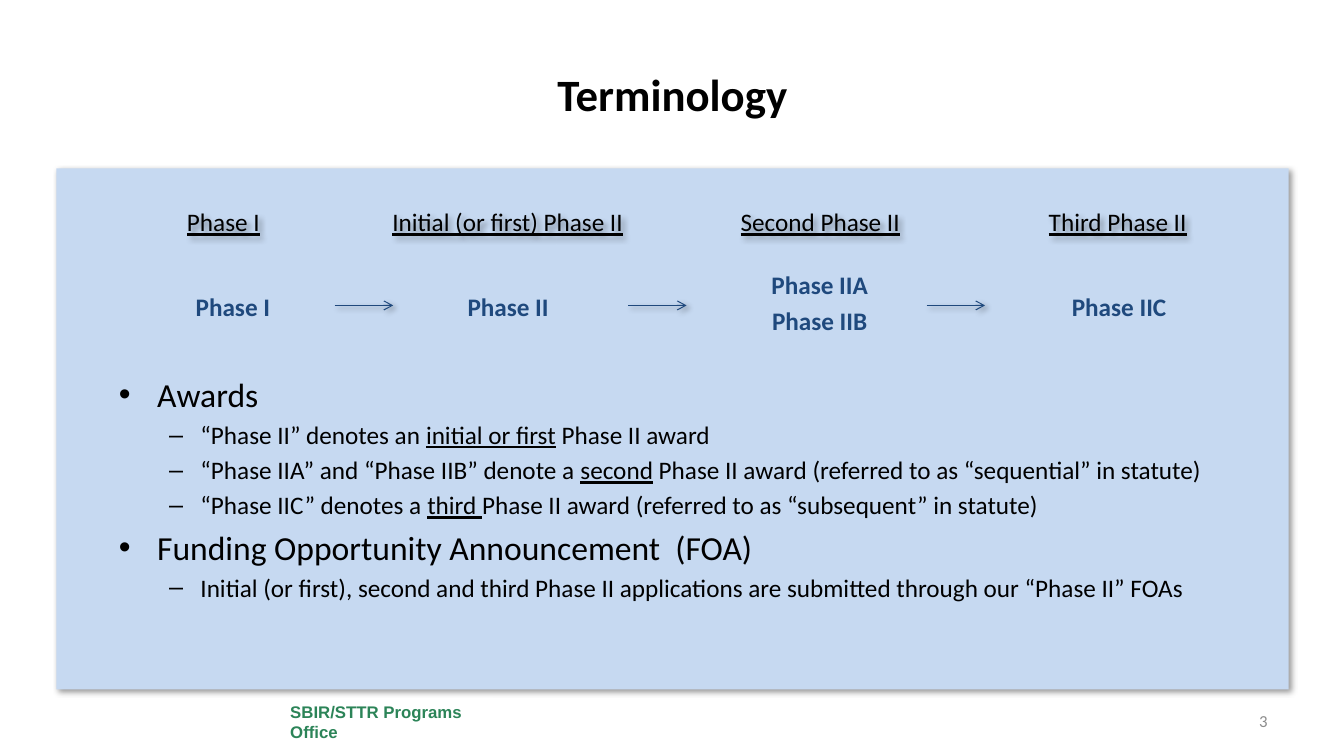
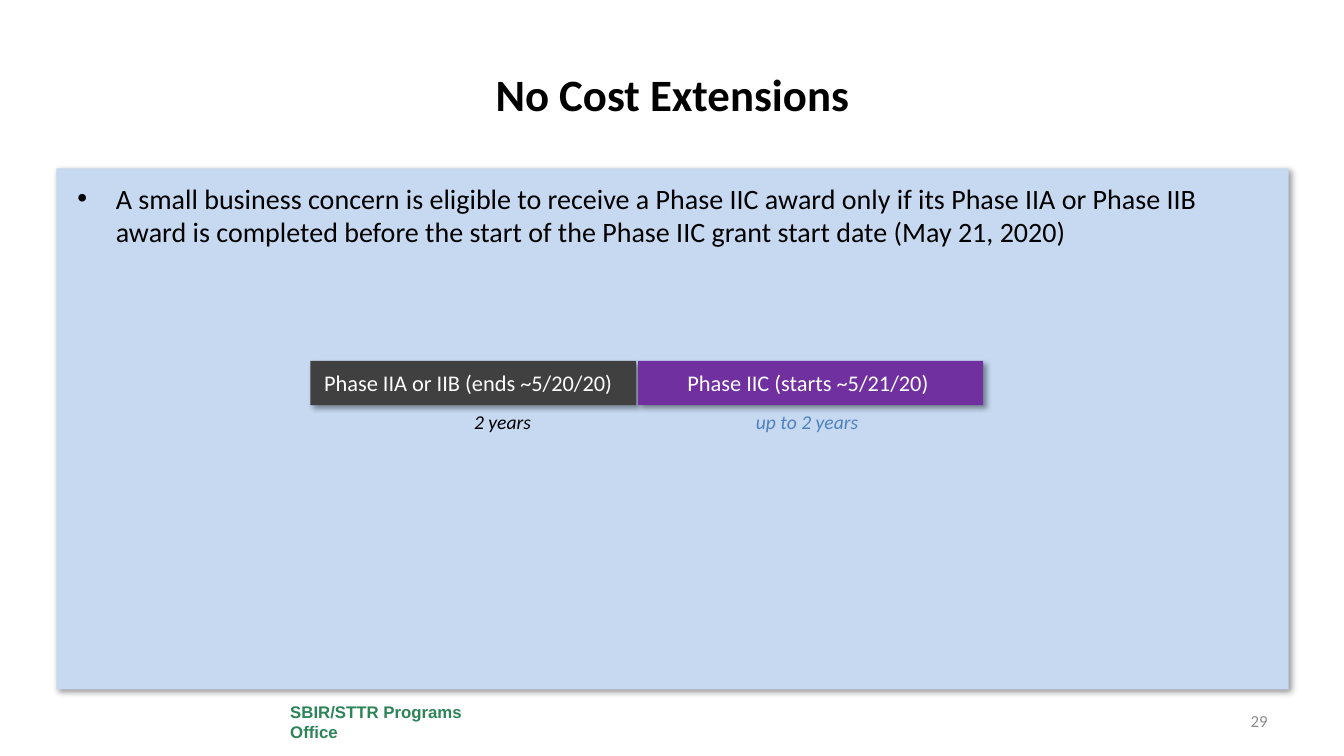
from lxml.etree import SubElement as Sub
from pptx import Presentation as Deck
from pptx.dml.color import RGBColor as RGB
from pptx.enum.shapes import MSO_CONNECTOR as Link, MSO_SHAPE as Shape
from pptx.enum.text import MSO_ANCHOR as Anchor, PP_ALIGN as Align
from pptx.oxml.ns import qn
from pptx.util import Pt

UNIT = 9144
PAGE = (0, 0, 1333, 750)
PANEL = (56, 167, 1222, 517)

BLACK, WHITE, NAVY = "000000", "FFFFFF", "1F497D"
SKY, GREEN, GREY = "C6D9F1", "2C8458", "8C8C8C"
DARK, PURPLE, BLUE = "404040", "7030A0", "4F81BD"

TITLE = {"size": Pt(32), "bold": True}
FOOT = {"size": Pt(12), "bold": True, "name": "Arial"}
FOLIO = {"size": Pt(12)}
HEAD = {"size": Pt(18), "underline": True}
STEP = {"size": Pt(18), "bold": True}
BAR = {"size": Pt(16)}
SPAN = {"size": Pt(14), "italic": True}

LEVELS = [("•", 38, -38), ("–", 81, -31)]

STAGES = [
    (33, "Phase I", 61, ["Phase I"]),
    (315, "Initial (or first) Phase II", 334, ["Phase II"]),
    (625, "Second Phase II", 643, ["Phase IIA", "Phase IIB"]),
    (920, "Third Phase II", 940, ["Phase IIC"]),
]
ARROWS = [276, 567, 863]

TERMS = [
    (0, 24, "Awards"),
    (1, 18, "“Phase II” denotes an _initial or first_ Phase II award"),
    (1, 18, "“Phase IIA” and “Phase IIB” denote a _second_ Phase II award"
            " (referred to as “sequential” in statute)"),
    (1, 18, "“Phase IIC” denotes a _third _Phase II award"
            " (referred to as “subsequent” in statute)"),
    (0, 24, "Funding Opportunity Announcement  (FOA)"),
    (1, 18, "Initial (or first), second and third Phase II applications"
            " are submitted through our “Phase II” FOAs"),
]
RULES = [
    (0, 20, "A small business concern is eligible to receive a Phase IIC award"
            " only if its Phase IIA or Phase IIB award is completed before"
            " the start of the Phase IIC grant start date (May 21, 2020)"),
]
BARS = [
    (252, 323, DARK, "Phase IIA or IIB (ends ~5/20/20)", 20, 377, "2 years", BLACK),
    (577, 342, PURPLE, "Phase IIC (starts ~5/21/20)", 15, 679, "up to 2 years", BLUE),
]


def px(num):
    return num * UNIT


def hue(code):
    return RGB.from_string(code)


def inner(box, left, top, wide, high):
    return box[0] + left, box[1] + top, wide, high


def apply(item, vals):
    for key, val in vals.items():
        setattr(item, key, val)


def write(para, text, color, look):
    run = para.add_run()
    run.text = text
    apply(run.font, {"name": "Calibri", **look})
    run.font.color.rgb = hue(color)


def shade(item):
    fx = Sub(item._element.spPr, qn("a:effectLst"))
    cast = Sub(fx, qn("a:outerShdw"), blurRad=str(Pt(4)), dist=str(Pt(3)),
               dir="2700000", algn="tl", rotWithShape="0")
    tint = Sub(cast, qn("a:srgbClr"), val=BLACK)
    Sub(tint, qn("a:alpha"), val="40000")


def fill(item, text, color, look, align=Align.CENTER, anchor=Anchor.MIDDLE):
    frame = item.text_frame
    apply(frame, {"word_wrap": True, "vertical_anchor": anchor})
    para = frame.paragraphs[0]
    para.alignment = align
    write(para, text, color, look)


def label(slide, box, *args, **kw):
    item = slide.shapes.add_textbox(*map(px, box))
    fill(item, *args, **kw)
    return item


def block(slide, box, color, cast=True):
    item = slide.shapes.add_shape(Shape.RECTANGLE, *map(px, box))
    item.fill.solid()
    item.fill.fore_color.rgb = hue(color)
    item.line.fill.background()
    if cast:
        shade(item)
    else:
        item.shadow.inherit = False
    return item


def arrow(slide, box, left, top, wide):
    x, y, w, _ = inner(box, left, top, wide, 0)
    item = slide.shapes.add_connector(Link.STRAIGHT, px(x), px(y), px(x + w), px(y))
    item.line.width = Pt(0.75)
    item.line.color.rgb = hue(NAVY)
    Sub(item.line._get_or_add_ln(), qn("a:tailEnd"), type="arrow")
    shade(item)


def bullets(slide, box, rows):
    frame = slide.shapes.add_textbox(*map(px, box)).text_frame
    frame.word_wrap = True
    for idx, (level, size, text) in enumerate(rows):
        para = frame.add_paragraph() if idx else frame.paragraphs[0]
        mark, left, hang = LEVELS[level]
        apply(para, {"level": level, "space_before": Pt(size * 0.2 if idx else 0)})
        props = para._p.get_or_add_pPr()
        props.set("marL", str(px(left)))
        props.set("indent", str(px(hang)))
        Sub(props, qn("a:buFont"), typeface="Arial")
        Sub(props, qn("a:buChar"), char=mark)
        for num, part in enumerate(text.split("_")):
            write(para, part, BLACK, {"size": Pt(size), "underline": num % 2 == 1})


def base(deck, title, folio):
    slide = deck.slides.add_slide(deck.slide_layouts[6])
    block(slide, PANEL, SKY)
    foot = block(slide, inner(PAGE, 278, 692, 211, 48), WHITE, False)
    fill(foot, "SBIR/STTR Programs Office", GREEN, FOOT, Align.LEFT)
    label(slide, inner(PAGE, 67, 30, 1200, 125), title, BLACK, TITLE)
    label(slide, inner(PAGE, 1056, 695, 211, 40), folio, GREY, FOLIO, Align.RIGHT)
    return slide


def flow(slide, box):
    for left, head, side, names in STAGES:
        shade(label(slide, inner(box, left, 31, 265, 44), head, BLACK, HEAD))
        top = 117 - 22 * (len(names) - 1)
        for idx, name in enumerate(names):
            label(slide, inner(box, side, top + 36 * idx, 228, 40),
                  name, NAVY, STEP, anchor=Anchor.TOP)
    for left in ARROWS:
        arrow(slide, box, left, 136, 58)


def spans(slide, box):
    for left, wide, color, text, pad, side, note, ink in BARS:
        bar = block(slide, inner(box, left, 191, wide, 44), color)
        fill(bar, text, WHITE, BAR)
        bar.text_frame.margin_right = px(pad)
        label(slide, inner(box, side, 235, 131, 34),
              note, ink, SPAN, anchor=Anchor.TOP)


def terms(deck):
    slide = base(deck, "Terminology", "3")
    flow(slide, PANEL)
    bullets(slide, inner(PANEL, 52, 199, 1125, 259), TERMS)


def extend(deck):
    slide = base(deck, "No Cost Extensions", "29")
    bullets(slide, inner(PANEL, 11, 8, 1200, 495), RULES)
    spans(slide, PANEL)


def main():
    deck = Deck()
    apply(deck, {"slide_width": px(PAGE[2]), "slide_height": px(PAGE[3])})
    terms(deck)
    extend(deck)
    deck.save("out.pptx")


if __name__ == "__main__":
    main()
